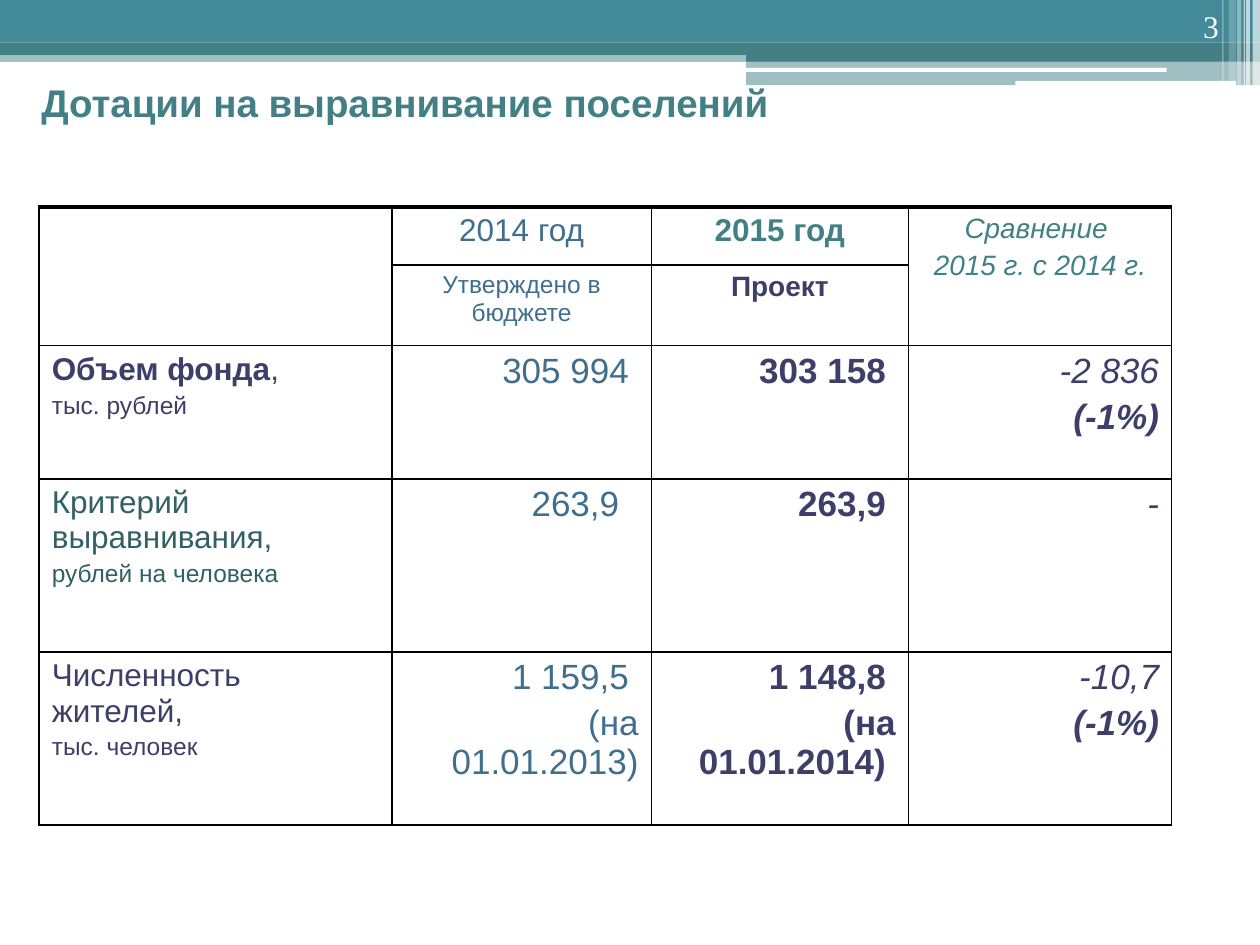
from lxml import etree
from pptx import Presentation
from pptx.dml.color import RGBColor
from pptx.enum.shapes import MSO_SHAPE
from pptx.enum.text import MSO_ANCHOR, PP_ALIGN
from pptx.oxml.ns import qn
from pptx.util import Cm, Pt

RECTANGLE, ROUNDED = MSO_SHAPE.RECTANGLE, MSO_SHAPE.ROUNDED_RECTANGLE
LEFT, CENTER, RIGHT = PP_ALIGN.LEFT, PP_ALIGN.CENTER, PP_ALIGN.RIGHT
TOP, BOTTOM = MSO_ANCHOR.TOP, MSO_ANCHOR.BOTTOM
TITLE_ONLY = 5


class Theme:
    teal, sea, steel = "438086", "428A98", "406F8D"
    navy, pine, white, black = "3E3F68", "326065", "FFFFFF", "000000"
    title, value, label, header, note = 22, 20, 18, 16, 14
    font, number_font = "Arial", "Times New Roman"
    thin, thick = 1, 2.25


def style(size, color, bold=False, italic=False, name=Theme.font):
    return {"size": Pt(size), "color": color, "bold": bold,
            "italic": italic, "name": name}


TITLE = style(Theme.title, Theme.teal, bold=True)
NUMBER = style(Theme.label, Theme.white, name=Theme.number_font)
OLD_YEAR = style(Theme.label, Theme.steel)
NEW_YEAR = style(Theme.label, Theme.teal, bold=True)
COMPARISON = style(Theme.header, Theme.teal, italic=True)
APPROVED = style(Theme.note, Theme.steel)
DRAFT = style(Theme.header, Theme.navy, bold=True)
LABEL = style(Theme.label, Theme.navy)
LABEL_BOLD = style(Theme.label, Theme.navy, bold=True)
UNIT = style(Theme.note, Theme.navy)
CRITERION = style(Theme.label, Theme.pine)
CRITERION_UNIT = style(Theme.note, Theme.pine)
OLD = style(Theme.value, Theme.steel)
NEW = style(Theme.value, Theme.navy, bold=True)
CHANGE = style(Theme.value, Theme.navy, italic=True)
PERCENT = style(Theme.value, Theme.navy, bold=True, italic=True)

# Each cell lists its paragraphs, each paragraph its (text, style) runs
HEADER = [
    [[], [[("2014 год", OLD_YEAR)]], [[("2015 год", NEW_YEAR)]],
     [[("Сравнение ", COMPARISON)], [("2015 г. с 2014 г.", COMPARISON)]]],
    [[], [[("Утверждено в бюджете", APPROVED)]], [[("Проект", DRAFT)]], []],
]
BODY = [
    [[[("Объем фонда", LABEL_BOLD), (",", LABEL)], [("тыс. рублей", UNIT)]],
     [[("305 994 ", OLD)]], [[(" 303 158 ", NEW)]],
     [[("-2 836", CHANGE)], [("(-1%)", PERCENT)]]],
    [[[("Критерий выравнивания,", CRITERION)],
      [("рублей на человека", CRITERION_UNIT)]],
     [[("263,9 ", OLD)]], [[("263,9 ", NEW)]], [[("-", CHANGE)]]],
    [[[("Численность жителей,", LABEL)], [("тыс. человек", UNIT)]],
     [[("1 159,5 ", OLD)], [("(на 01.01.2013)", OLD)]],
     [[("1 148,8 ", NEW)], [("(на 01.01.2014) ", NEW)]],
     [[("-10,7", CHANGE)], [("(-1%)", PERCENT)]]],
]
COLUMN_WIDTHS = [7.11, 5.23, 5.18, 5.31]
ROW_HEIGHTS = [1.17, 1.62, 2.69, 3.49, 3.49]


def add_run(paragraph, text, run_style):
    run = paragraph.add_run()
    run.text = text
    for name, value in run_style.items():
        if name == "color":
            run.font.color.rgb = RGBColor.from_string(value)
        else:
            setattr(run.font, name, value)


def add_bar(slide, box, color, opacity=100, preset=RECTANGLE):
    shape = slide.shapes.add_shape(preset, *map(Cm, box))
    shape.shadow.inherit = False
    shape.fill.solid()
    shape.fill.fore_color.rgb = RGBColor.from_string(color)
    shape.line.fill.background()
    if opacity < 100:
        tint = shape.fill._xPr.find(".//" + qn("a:srgbClr"))
        etree.SubElement(tint, qn("a:alpha"), val=str(opacity * 1000))


def add_banner(slide, left, top, width):
    # Full-width bands, then the step on the right
    step = left + 15.04
    step_width = width - 15.04
    add_bar(slide, (left, top + 1.02, width, 0.23), Theme.teal, 50)
    add_bar(slide, (left, top, width, 0.86), Theme.sea)
    add_bar(slide, (left, top + 0.86, width, 0.25), Theme.teal)
    add_bar(slide, (step, top + 0.99, step_width, 0.25), Theme.teal)
    add_bar(slide, (step, top + 1.22, step_width, 0.5), Theme.teal, 50)
    # White slits
    for x, y, length, height in [(15.01, 1.37, 8.51, 0.08),
                                 (20.47, 1.63, 4.45, 0.1)]:
        add_bar(slide, (left + x, top + y, length, height), Theme.white,
                preset=ROUNDED)
    # Translucent stripes at the right edge
    for x, thickness, height, opacity in [
            (25.25, 0.15, 1.73, 65), (25.12, 0.08, 1.73, 65),
            (25.07, 0.03, 1.73, 60), (24.94, 0.08, 1.73, 40),
            (24.77, 0.15, 1.63, 20), (24.64, 0.03, 1.63, 30)]:
        add_bar(slide, (left + x, top, thickness, height), Theme.white, opacity)


def add_title(slide, left, top, width, height):
    title = slide.shapes.title
    box = {"left": left, "top": top, "width": width, "height": height}
    for name, value in box.items():
        setattr(title, name, Cm(value))
    frame = title.text_frame
    frame.vertical_anchor = TOP
    frame.margin_top = Cm(0.2)
    frame.paragraphs[0].alignment = LEFT
    add_run(frame.paragraphs[0], "Дотации на выравнивание поселений", TITLE)
    # Bring the title in front of the banner
    title._element.getparent().append(title._element)


def add_slide_number(slide, left, top, width, height):
    frame = slide.shapes.add_textbox(*map(Cm, (left, top, width, height))).text_frame
    frame.word_wrap = True
    frame.vertical_anchor = BOTTOM
    frame.paragraphs[0].alignment = RIGHT
    add_run(frame.paragraphs[0], "3", NUMBER)


def set_borders(cell, top_width):
    properties = cell._tc.get_or_add_tcPr()
    widths = {"a:lnL": Theme.thin, "a:lnR": Theme.thin,
              "a:lnT": top_width, "a:lnB": Theme.thin}
    for position, (tag, width) in enumerate(widths.items()):
        line = etree.Element(qn(tag), w=str(Pt(width)))
        fill = etree.SubElement(line, qn("a:solidFill"))
        etree.SubElement(fill, qn("a:srgbClr"), val=Theme.black)
        properties.insert(position, line)


def fill_cell(cell, paragraphs, alignment):
    for index, runs in enumerate(paragraphs):
        frame = cell.text_frame
        paragraph = frame.add_paragraph() if index else frame.paragraphs[0]
        paragraph.alignment = alignment
        paragraph.space_before = Pt(runs[0][1]["size"].pt * 0.2)
        for text, run_style in runs:
            add_run(paragraph, text, run_style)


def add_grants_table(slide, left, top):
    rows = HEADER + BODY
    table = slide.shapes.add_table(
        len(rows), len(COLUMN_WIDTHS), Cm(left), Cm(top),
        Cm(sum(COLUMN_WIDTHS)), Cm(sum(ROW_HEIGHTS))).table
    table.first_row = table.horz_banding = False
    for column, width in zip(table.columns, COLUMN_WIDTHS):
        column.width = Cm(width)
    for row, height in zip(table.rows, ROW_HEIGHTS):
        row.height = Cm(height)
    for r, row in enumerate(rows):
        for c, paragraphs in enumerate(row):
            cell = table.cell(r, c)
            cell.fill.background()
            set_borders(cell, Theme.thin if r else Theme.thick)
            alignment = CENTER if r < len(HEADER) else RIGHT if c else LEFT
            fill_cell(cell, paragraphs, alignment)
    # The outer header cells span both header rows
    for c in (0, len(COLUMN_WIDTHS) - 1):
        table.cell(0, c).merge(table.cell(1, c))
    # The old criterion stands a little further from the edge
    table.cell(3, 1).margin_right = Cm(0.45)


def main():
    presentation = Presentation()
    presentation.slide_width, presentation.slide_height = Cm(25.4), Cm(19.05)
    slide = presentation.slides.add_slide(presentation.slide_layouts[TITLE_ONLY])
    add_banner(slide, 0, 0, 25.4)
    add_title(slide, 0.58, 1.4, 24.82, 2.18)
    add_grants_table(slide, 0.79, 4.17)
    add_slide_number(slide, 22.71, 0, 2.11, 1.02)
    presentation.save("out.pptx")


if __name__ == "__main__":
    main()
